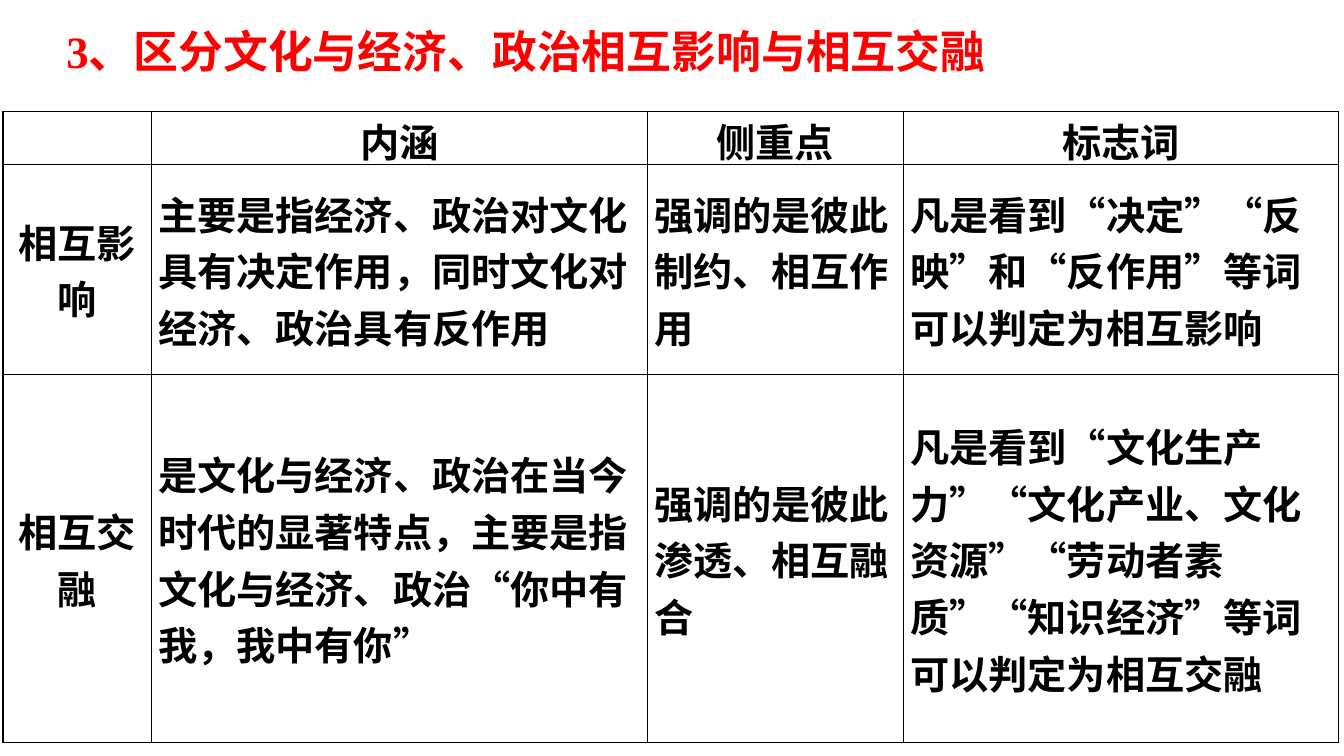
from itertools import groupby

from lxml import etree
from pptx import Presentation
from pptx.dml.color import RGBColor
from pptx.enum.text import MSO_ANCHOR, PP_ALIGN
from pptx.oxml.ns import qn
from pptx.util import Inches, Pt

RED = RGBColor(0xFF, 0, 0)
BLACK = RGBColor(0, 0, 0)
CENTER, LEFT = PP_ALIGN.CENTER, PP_ALIGN.LEFT
MIDDLE = MSO_ANCHOR.MIDDLE
LATIN, HAN = "Times New Roman", "Noto Sans CJK SC"

TITLE = "3、区分文化与经济、政治相互影响与相互交融"
COLS = [1.47, 4.92, 2.54, 4.32]
ROWS = [0.52, 2.09, 3.65]
CELLS = [
    ["", "内涵", "侧重点", "标志词"],
    ["相互影响",
     "主要是指经济、政治对文化具有决定作用，同时文化对经济、政治具有反作用",
     "强调的是彼此制约、相互作用",
     "凡是看到“决定”“反映”和“反作用”等词可以判定为相互影响"],
    ["相互交融",
     "是文化与经济、政治在当今时代的显著特点，主要是指文化与经济、政治“你中有我，我中有你”",
     "强调的是彼此渗透、相互融合",
     "凡是看到“文化生产力”“文化产业、文化资源”“劳动者素质”“知识经济”等词可以判定为相互交融"],
]


def add_runs(para, text, size, color):
    """Add bold runs, giving curly quotes the Han font."""
    for quoted, chars in groupby(text, lambda char: char in "“”"):
        run = para.add_run()
        run.text = "".join(chars)
        font = run.font
        font.name = HAN if quoted else LATIN
        font.size, font.bold = Pt(size), True
        font.color.rgb = color
        props = run._r.get_or_add_rPr()
        props.set("lang", "zh-CN")
        etree.SubElement(props, qn("a:ea")).set("typeface", HAN)


def add_title(slide):
    box = slide.shapes.add_textbox(
        Inches(-0.15), Inches(0.16), Inches(10.48), Inches(1.1))
    box.text_frame.word_wrap = True
    para = box.text_frame.paragraphs[0]
    para.level = 4
    props = para._p.get_or_add_pPr()
    props.set("marL", "0")
    props.set("indent", str(Inches(0.71)))
    para.line_spacing = Pt(40)
    add_runs(para, TITLE, 32, RED)


def set_borders(cell):
    props = cell._tc.get_or_add_tcPr()
    for pos, side in enumerate(("lnL", "lnR", "lnT", "lnB")):
        line = etree.Element(qn("a:" + side), w=str(Pt(1)))
        fill = etree.SubElement(line, qn("a:solidFill"))
        etree.SubElement(fill, qn("a:srgbClr"), val=str(BLACK))
        props.insert(pos, line)


def fill_cell(cell, text, align):
    cell.fill.background()
    set_borders(cell)
    cell.vertical_anchor = MIDDLE
    cell.margin_left = cell.margin_right = Inches(0.07)
    cell.margin_top = cell.margin_bottom = 0
    para = cell.text_frame.paragraphs[0]
    para.alignment = align
    if text:
        add_runs(para, text, 28, BLACK)


def add_grid(slide):
    table = slide.shapes.add_table(
        len(ROWS), len(COLS), Inches(0.03), Inches(1.11),
        Inches(sum(COLS)), Inches(sum(ROWS))).table
    table.first_row = table.horz_banding = False
    for col, width in zip(table.columns, COLS):
        col.width = Inches(width)
    for row, height, texts in zip(table.rows, ROWS, CELLS):
        row.height = Inches(height)
        for pos, (cell, text) in enumerate(zip(row.cells, texts)):
            head = pos == 0 or texts is CELLS[0]
            fill_cell(cell, text, CENTER if head else LEFT)


def main():
    deck = Presentation()
    deck.slide_width, deck.slide_height = Inches(13.33), Inches(7.5)
    slide = deck.slides.add_slide(deck.slide_layouts[6])
    add_title(slide)
    add_grid(slide)
    deck.save("out.pptx")


if __name__ == "__main__":
    main()
